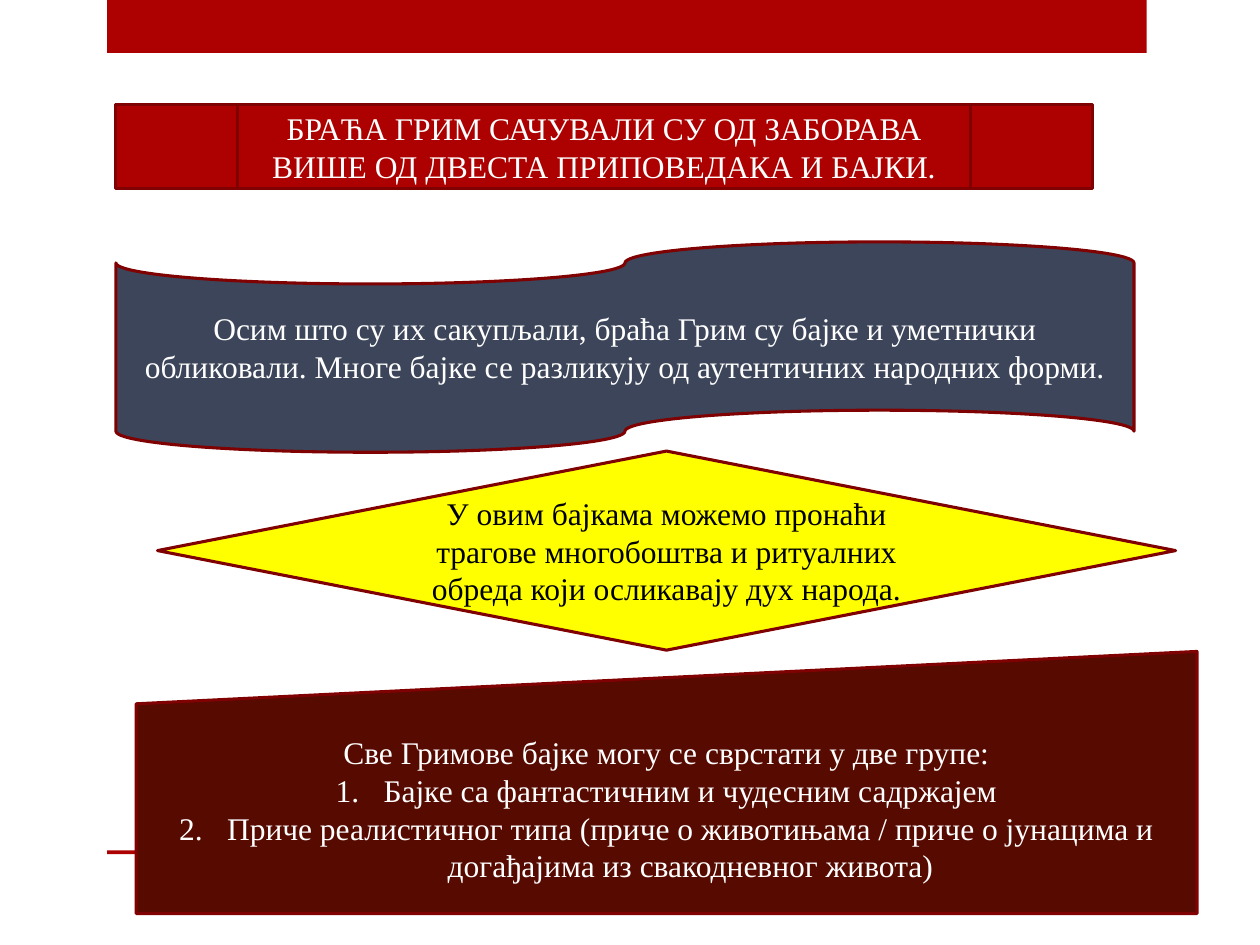
from dataclasses import dataclass

from lxml import etree
from pptx import Presentation
from pptx import util as u
from pptx.dml.color import RGBColor
from pptx.enum import shapes, text
from pptx.oxml import ns


@dataclass(frozen=True)
class Theme:
    red: str = "AD0101"
    outline: str = "800101"
    slate: str = "3C4559"
    yellow: str = "FFFF00"
    maroon: str = "560A00"
    light: str = "FFFFFF"
    dark: str = "000000"
    font: str = "Times New Roman"
    body: int = 18
    border: float = 1.75
    indent: float = 0.38


class SlideBuilder:
    def __init__(self, slide, theme):
        self.slide = slide
        self.theme = theme

    def shape(self, kind, box, fill):
        item = self.slide.shapes.add_shape(kind, *map(u.Inches, box))
        item.shadow.inherit = False
        item.fill.solid()
        item.fill.fore_color.rgb = RGBColor.from_string(fill)
        return item

    def bar(self, box):
        self.shape(shapes.MSO_SHAPE.RECTANGLE, box, self.theme.red).line.fill.background()

    def panel(self, kind, box, fill, intro, color=None, numbered=()):
        item = self.shape(kind, box, fill)
        item.line.color.rgb = RGBColor.from_string(self.theme.outline)
        item.line.width = u.Pt(self.theme.border)
        frame = item.text_frame
        frame.word_wrap = True
        frame.vertical_anchor = text.MSO_ANCHOR.MIDDLE
        self.sentence(frame.paragraphs[0], intro, color)
        for entry in numbered:
            paragraph = frame.add_paragraph()
            self.sentence(paragraph, entry, color)
            self.number(paragraph)

    def sentence(self, paragraph, words, color):
        paragraph.alignment = text.PP_ALIGN.CENTER
        run = paragraph.add_run()
        run.text = words
        formats = {"name": self.theme.font, "size": u.Pt(self.theme.body)}
        for key, value in formats.items():
            setattr(run.font, key, value)
        run.font.color.rgb = RGBColor.from_string(color or self.theme.light)

    def number(self, paragraph):
        props = paragraph._p.get_or_add_pPr()
        indent = u.Inches(self.theme.indent)
        for key, value in {"marL": indent, "indent": -indent}.items():
            props.set(key, str(value))
        font = etree.SubElement(props, ns.qn("a:buFont"))
        font.set("typeface", "+mj-lt")
        etree.SubElement(props, ns.qn("a:buAutoNum")).set("type", "arabicPeriod")


def main():
    deck = Presentation()
    deck.slide_width, deck.slide_height = u.Inches(10), u.Inches(7.5)
    theme = Theme()
    page = SlideBuilder(deck.slides.add_slide(deck.slide_layouts[6]), theme)
    kinds = shapes.MSO_SHAPE

    for top, height in ((0, 0.42), (6.75, 0.03)):
        page.bar((0.85, top, 8.25, height))

    page.panel(
        kinds.FLOWCHART_PREDEFINED_PROCESS, (0.92, 0.83, 7.75, 0.67), theme.red,
        "БРАЋА ГРИМ САЧУВАЛИ СУ ОД ЗАБОРАВА ВИШЕ ОД ДВЕСТА ПРИПОВЕДАКА И БАЈКИ.",
    )
    page.panel(
        kinds.FLOWCHART_PUNCHED_TAPE, (0.92, 1.92, 8.08, 1.67), theme.slate,
        "Осим што су их сакупљали, браћа Грим су бајке и уметнички обликовали. "
        "Многе бајке се разликују од аутентичних народних форми.",
    )
    page.panel(
        kinds.FLOWCHART_DECISION, (1.25, 3.58, 8.08, 1.58), theme.yellow,
        "У овим бајкама можемо пронаћи трагове многобоштва и ритуалних "
        "обреда који осликавају дух народа.",
        color=theme.dark,
    )
    page.panel(
        kinds.FLOWCHART_MANUAL_INPUT, (1.08, 5.17, 8.42, 2.08), theme.maroon,
        "Све Гримове бајке могу се сврстати у две групе:",
        numbered=(
            "Бајке са фантастичним и чудесним садржајем",
            "Приче реалистичног типа (приче о животињама / приче о јунацима "
            "и догађајима из свакодневног живота)",
        ),
    )
    deck.save("out.pptx")


if __name__ == "__main__":
    main()
